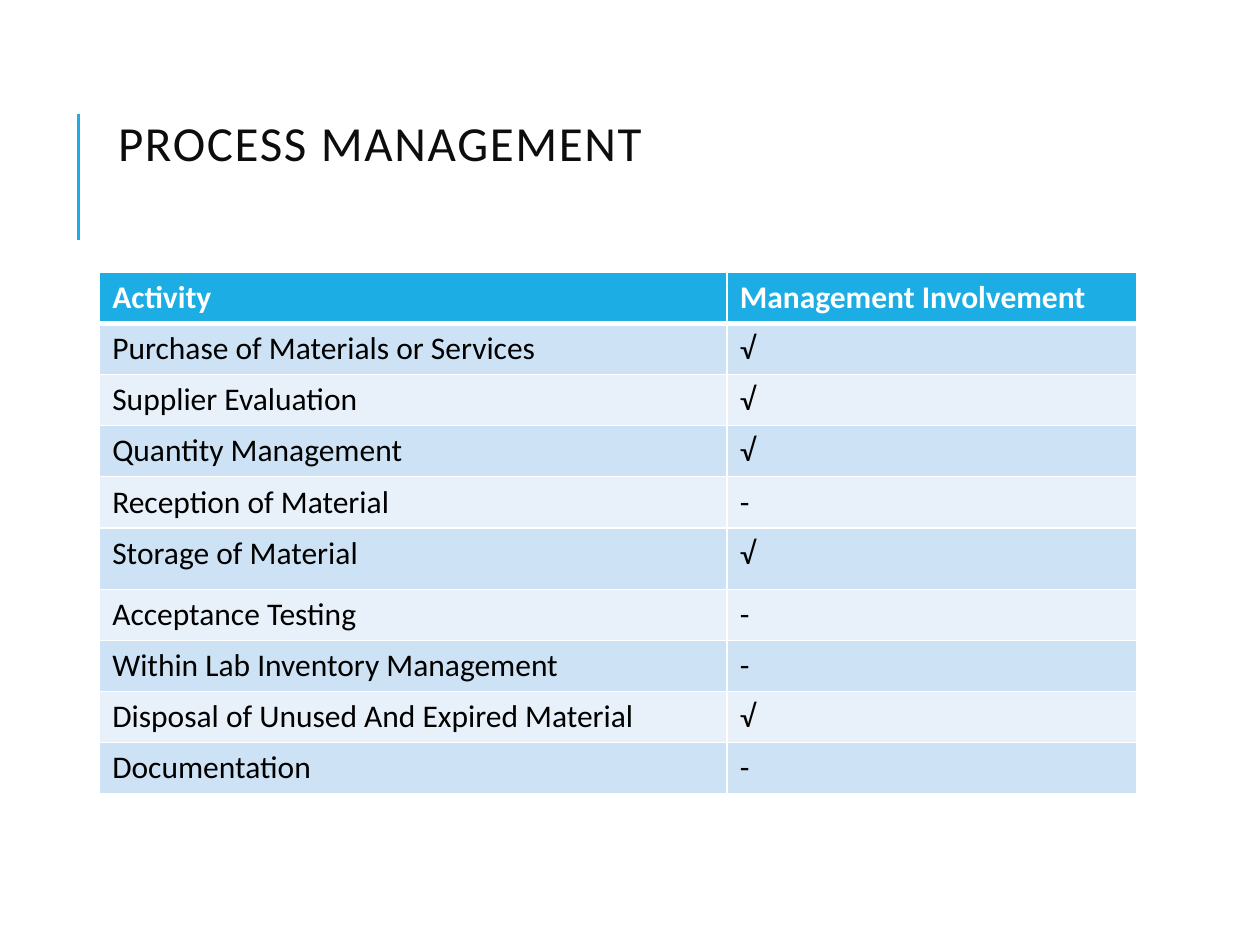
from lxml import etree
from pptx import Presentation
from pptx.dml.color import RGBColor
from pptx.enum.shapes import MSO_CONNECTOR
from pptx.enum.text import MSO_ANCHOR
from pptx.oxml.ns import qn
from pptx.util import Cm, Pt

STRAIGHT = MSO_CONNECTOR.STRAIGHT
MIDDLE = MSO_ANCHOR.MIDDLE
FONT = "Calibri"
ACCENT, WHITE, BLACK, TITLE_COLOR = "1CADE4", "FFFFFF", "000000", "0D0D0D"
BANDS = ("CDE3F5", "E8F1FA")
COLUMN_WIDTHS = (12.65, 8.25)
ROW_HEIGHT, STORAGE_HEIGHT = 1.03, 1.24
STORAGE_ROW = 5
ROWS = [
    ("Activity", "Management Involvement"),
    ("Purchase of Materials or Services", "√"),
    ("Supplier Evaluation", "√"),
    ("Quantity Management", "√"),
    ("Reception of Material", "-"),
    ("Storage of Material", "√"),
    ("Acceptance Testing", "-"),
    ("Within Lab Inventory Management", "-"),
    ("Disposal of Unused And Expired Material", "√"),
    ("Documentation", "-"),
]


def rgb(color):
    """Turn a hex string into a colour."""
    return RGBColor.from_string(color)


def add_run(p, text, size, color, bold=False):
    """Add a formatted run to a paragraph and return it."""
    r = p.add_run()
    r.text = text
    r.font.name = FONT
    r.font.size = Pt(size)
    r.font.bold = bold
    r.font.color.rgb = rgb(color)
    return r


def add_accent_line(s, x, top, bottom):
    """Draw the vertical line beside the title."""
    line = s.shapes.add_connector(STRAIGHT, Cm(x), Cm(bottom), Cm(x), Cm(top))
    line.line.color.rgb = rgb(ACCENT)
    line.line.width = Pt(1.5)
    etree.SubElement(line._element.spPr, qn("a:effectLst"))


def add_title(s, text, left, top, width, height):
    """Add the letter-spaced title."""
    sp = s.shapes.add_textbox(Cm(left), Cm(top), Cm(width), Cm(height))
    tf = sp.text_frame
    tf.word_wrap = True
    tf.vertical_anchor = MIDDLE
    p = tf.paragraphs[0]
    p.line_spacing = 0.8
    r = add_run(p, text, 28, TITLE_COLOR)
    r.font._element.set("spc", "100")


def set_borders(cell, top, bottom):
    """Give a cell white borders, with the top and bottom widths in points."""
    tcPr = cell._tc.get_or_add_tcPr()
    widths = {"lnL": 1, "lnR": 1, "lnT": top, "lnB": bottom}
    for i, (side, width) in enumerate(widths.items()):
        ln = etree.Element(qn(f"a:{side}"), w=str(Pt(width)))
        fill = etree.SubElement(ln, qn("a:solidFill"))
        etree.SubElement(fill, qn("a:srgbClr"), val=WHITE)
        tcPr.insert(i, ln)


def fill_cell(cell, text, row):
    """Write and style one cell according to its row."""
    header = row == 0
    cell.fill.solid()
    cell.fill.fore_color.rgb = rgb(ACCENT if header else BANDS[(row - 1) % 2])
    set_borders(cell, top=3 if row == 1 else 1, bottom=3 if header else 1)
    p = cell.text_frame.paragraphs[0]
    add_run(p, text, 18, WHITE if header else BLACK, header)


def add_activity_table(s, left, top):
    """Add the table of activities and management involvement."""
    heights = [STORAGE_HEIGHT if i == STORAGE_ROW else ROW_HEIGHT
               for i in range(len(ROWS))]
    table = s.shapes.add_table(
        len(ROWS), len(COLUMN_WIDTHS), Cm(left), Cm(top),
        Cm(sum(COLUMN_WIDTHS)), Cm(sum(heights))).table
    for column, width in zip(table.columns, COLUMN_WIDTHS):
        column.width = Cm(width)
    for i, texts in enumerate(ROWS):
        table.rows[i].height = Cm(heights[i])
        for j, text in enumerate(texts):
            fill_cell(table.cell(i, j), text, i)


def main():
    """Build and save the slide."""
    prs = Presentation()
    prs.slide_width, prs.slide_height = Cm(25.4), Cm(19.05)
    s = prs.slides.add_slide(prs.slide_layouts[6])
    add_accent_line(s, 1.58, 2.29, 4.83)
    add_title(s, "PROCESS MANAGEMENT", 2.13, 1.63, 20.27, 2.69)
    add_activity_table(s, 2.01, 5.49)
    prs.save("out.pptx")


if __name__ == "__main__":
    main()
